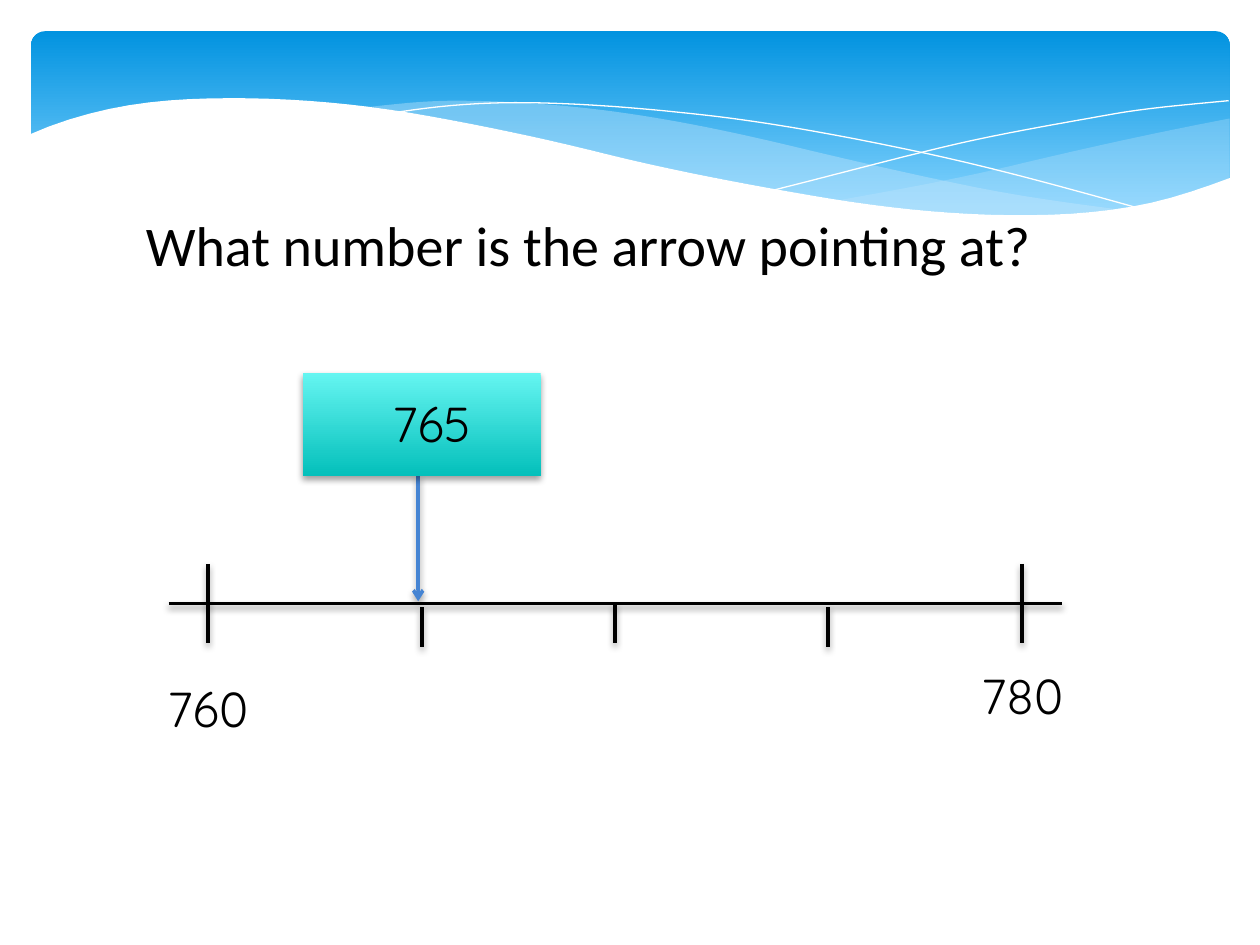
"""Builds a number line slide with a wave banner and a labelled arrow."""
from dataclasses import dataclass
from itertools import pairwise

from lxml.etree import SubElement
from pptx import Presentation
from pptx.dml.color import RGBColor
from pptx.enum.shapes import MSO_CONNECTOR, MSO_SHAPE
from pptx.enum.text import MSO_AUTO_SIZE, PP_ALIGN
from pptx.oxml.ns import qn
from pptx.util import Cm, Pt


@dataclass(frozen=True)
class Theme:
    """Colours, fonts and sizes of the slide."""
    ink: str = "000000"
    paper: str = "FFFFFF"
    mist: str = "C6E7FC"
    arrow: str = "4584D3"
    banner: tuple = ((0, "0293E0"), (0.9, "83D3FE"))
    answer: tuple = ((0, "65F5F1"), (1, "04C0BB"))
    title_font: str = "Calibri"
    number_font: str = "Quicksand"
    title_size: int = 32
    number_size: int = 28
    stroke: int = 2


@dataclass(frozen=True)
class Knot:
    """A point in centimetres that a curve passes with the given slope."""
    x: float
    y: float
    slope: float


THEME = Theme()
STEPS_PER_CURVE = 60

TITLE = ("What number is the arrow pointing at?", (2.69, 4.11, 19.41, 1.63))
SCALE_LABELS = [
    ("760", (2.69, 13.55, 3, 1.45), True),
    ("780", (19.46, 13.3, 2.29, 1.45), False)]
ANSWER = ("765", (6.81, 7.8, 3.78, 1.45))
ANSWER_BOX = (6.1, 7.52, 4.8, 2.07)
ARROW_X = 8.43

AXIS_LEFT, AXIS_RIGHT, AXIS_Y = 3.4, 21.41, 12.17
TICK = 0.8
END_TICKS = [4.19, 20.6]
INNER_TICKS = [(8.51, 0.07), (12.4, 0), (16.69, 0.07)]

BANNER = (0.63, 0.63, 24.16, 3.96)
PAPER_FLOOR = 5.69
PAPER_EDGE = [
    Knot(0.58, 2.72, -0.45), Knot(1.93, 2.26, -0.25), Knot(4.7, 1.98, 0),
    Knot(8.64, 2.34, 0.18), Knot(12.07, 3.07, 0.25), Knot(16.46, 3.96, 0.17),
    Knot(20.57, 4.34, 0), Knot(23.11, 4.11, -0.21), Knot(24.82, 3.58, -0.37)]
RIGHT_CREST = [
    Knot(16.79, 4.06, -0.18), Knot(20.45, 3.33, -0.24), Knot(24.79, 2.39, -0.19)]
LEFT_CREST = [
    Knot(7.26, 2.18, -0.12), Knot(9.17, 2.03, 0), Knot(11.81, 2.18, 0.11),
    Knot(15.98, 2.95, 0.24), Knot(19.69, 3.78, 0.2), Knot(22.68, 4.24, 0.13)]
FALLING_LINE = [
    Knot(7.85, 2.29, -0.17), Knot(10.57, 2.07, 0.01), Knot(14.12, 2.31, 0.11),
    Knot(18.47, 3.05, 0.21), Knot(23.04, 4.22, 0.28)]
RISING_LINE = [
    Knot(15.57, 3.84, -0.25), Knot(19, 2.97, -0.24), Knot(22.38, 2.31, -0.18),
    Knot(24.77, 2.03, -0.1)]
RIBBONS = [(RIGHT_CREST, 29), (LEFT_CREST, 40)]


def height(knots, x):
    """Returns the cubic Hermite curve's y at x."""
    start, end = next(((a, b) for a, b in pairwise(knots) if x <= b.x),
                      (knots[-2], knots[-1]))
    span = end.x - start.x
    t = (x - start.x) / span
    ease = t * t * (3 - 2 * t)
    bend = start.slope * t * (1 - t) ** 2 - end.slope * t * t * (1 - t)
    return start.y + (end.y - start.y) * ease + span * bend


def trace(knots, left, right):
    step = (right - left) / STEPS_PER_CURVE
    columns = [left + step * index for index in range(STEPS_PER_CURVE + 1)]
    return [(x, height(knots, x)) for x in columns]


def trace_whole(knots):
    return trace(knots, knots[0].x, knots[-1].x)


def lengths(values):
    return [Cm(value) for value in values]


def colour(code):
    return RGBColor.from_string(code)


def add_alpha(colour_element, percent):
    SubElement(colour_element, qn("a:alpha")).set("val", str(percent * 1000))


def add_shadow(shape):
    properties = shape._element.spPr
    effects = properties.find(qn("a:effectLst"))
    if effects is None:
        effects = SubElement(properties, qn("a:effectLst"))
    shadow = SubElement(effects, qn("a:outerShdw"), blurRad=str(Pt(4)),
                        dist=str(Pt(2)), dir="5400000", rotWithShape="0")
    add_alpha(SubElement(shadow, qn("a:srgbClr"), val=THEME.ink), 38)


def add_panel(page, kind, place, stops):
    panel = page.shapes.add_shape(kind, *lengths(place))
    panel.shadow.inherit = False
    panel.line.fill.background()
    panel.fill.gradient()
    panel.fill.gradient_angle = 270
    for stop, (position, code) in zip(panel.fill.gradient_stops, stops):
        stop.position = position
        stop.color.rgb = colour(code)
    return panel


def add_outline(page, points, closed):
    first, *rest = [lengths(point) for point in points]
    builder = page.shapes.build_freeform(*first)
    builder.add_line_segments(rest, close=closed)
    outline = builder.convert_to_shape()
    outline.shadow.inherit = False
    return outline


def add_area(page, points, code, opacity=100):
    area = add_outline(page, points, closed=True)
    area.line.fill.background()
    area.fill.solid()
    area.fill.fore_color.rgb = colour(code)
    add_alpha(area._element.spPr.find(qn("a:solidFill"))[0], opacity)


def add_hairline(page, knots):
    hairline = add_outline(page, trace_whole(knots), closed=False)
    hairline.fill.background()
    hairline.line.color.rgb = colour(THEME.paper)
    hairline.line.width = Cm(0)


def add_banner(page):
    banner = add_panel(page, MSO_SHAPE.ROUNDED_RECTANGLE, BANNER, THEME.banner)
    banner.adjustments[0] = 0.07
    for crest, opacity in RIBBONS:
        lower_edge = trace(PAPER_EDGE, crest[0].x, crest[-1].x)
        add_area(page, trace_whole(crest) + lower_edge[::-1], THEME.mist, opacity)
    for knots in (FALLING_LINE, RISING_LINE):
        add_hairline(page, knots)
    floor = [(PAPER_EDGE[end].x, PAPER_FLOOR) for end in (-1, 0)]
    add_area(page, trace_whole(PAPER_EDGE) + floor, THEME.paper)


def add_line(page, ends, code=THEME.ink, arrow=False):
    line = page.shapes.add_connector(MSO_CONNECTOR.STRAIGHT, *lengths(ends))
    line.line.color.rgb = colour(code)
    line.line.width = Pt(THEME.stroke)
    if arrow:
        SubElement(line._element.spPr.find(qn("a:ln")), qn("a:tailEnd"), type="arrow")
    add_shadow(line)


def add_text(page, text, place, font=THEME.number_font, size=THEME.number_size,
             align=PP_ALIGN.CENTER, wrap=True):
    box = page.shapes.add_textbox(*lengths(place))
    frame = box.text_frame
    frame.word_wrap = wrap
    frame.auto_size = MSO_AUTO_SIZE.SHAPE_TO_FIT_TEXT
    para = frame.paragraphs[0]
    para.alignment = align
    span = para.add_run()
    span.text = text
    span.font.name = font
    span.font.size = Pt(size)
    span.font.color.rgb = colour(THEME.ink)


def add_number_line(page):
    add_line(page, (AXIS_LEFT, AXIS_Y, AXIS_RIGHT, AXIS_Y))
    ticks = [(x, -TICK, TICK) for x in END_TICKS]
    ticks += [(x, gap, gap + TICK) for x, gap in INNER_TICKS]
    for x, rise, drop in ticks:
        add_line(page, (x, AXIS_Y + rise, x, AXIS_Y + drop))
    for text, place, wrap in SCALE_LABELS:
        add_text(page, text, place, wrap=wrap)


def add_answer(page):
    box_bottom = ANSWER_BOX[1] + ANSWER_BOX[3]
    add_line(page, (ARROW_X, box_bottom, ARROW_X, AXIS_Y - 0.05), THEME.arrow, arrow=True)
    add_shadow(add_panel(page, MSO_SHAPE.RECTANGLE, ANSWER_BOX, THEME.answer))
    add_text(page, *ANSWER)


deck = Presentation()
deck.slide_width, deck.slide_height = lengths((25.4, 19.05))
page = deck.slides.add_slide(deck.slide_layouts[6])
add_banner(page)
add_text(page, *TITLE, THEME.title_font, THEME.title_size, PP_ALIGN.LEFT)
add_number_line(page)
add_answer(page)
deck.save("out.pptx")
